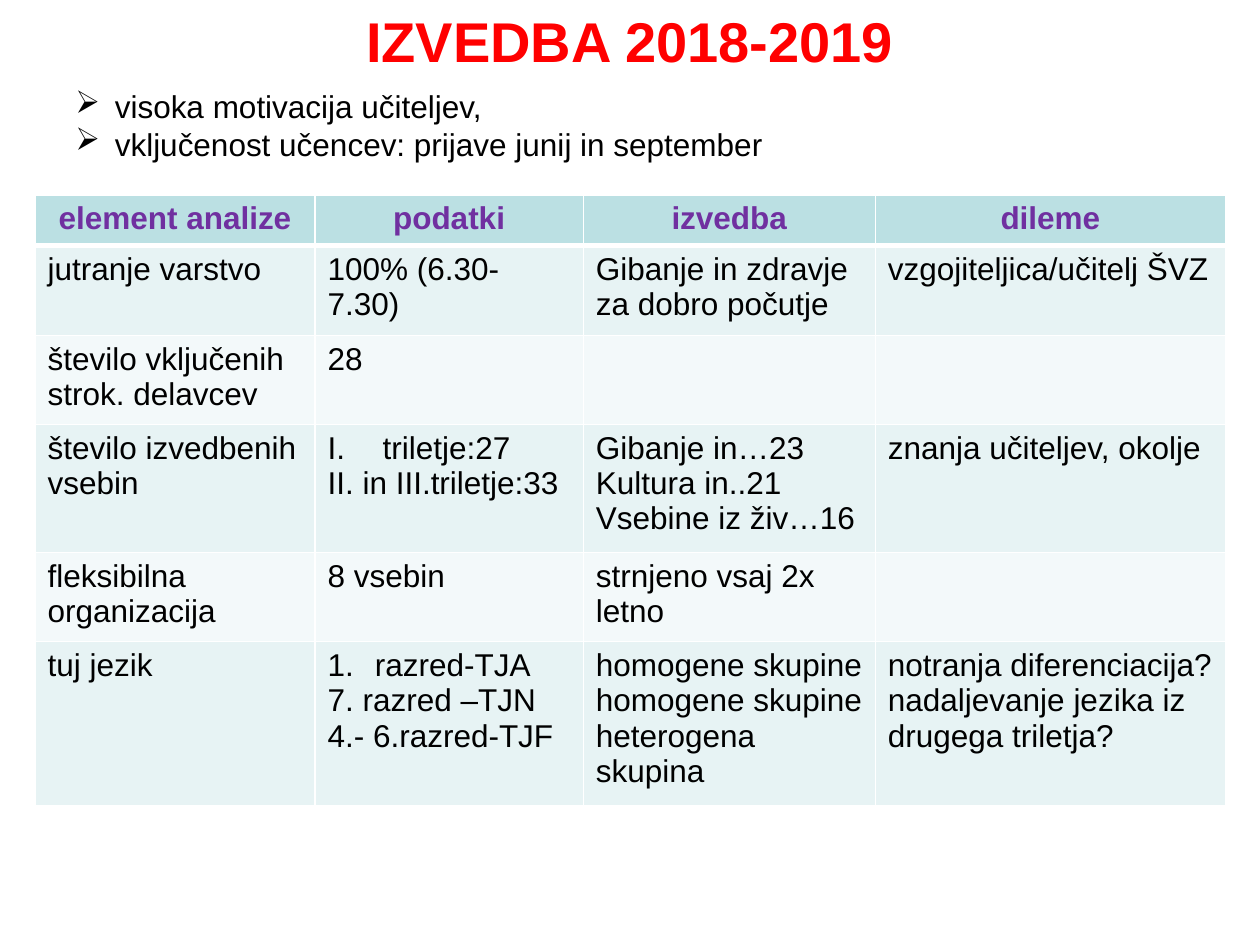
from lxml import etree
from pptx import Presentation
from pptx.dml.color import RGBColor
from pptx.enum.text import MSO_ANCHOR, PP_ALIGN
from pptx.oxml.ns import qn
from pptx.util import Pt

CENTER, LEFT = PP_ALIGN.CENTER, PP_ALIGN.LEFT
MIDDLE = MSO_ANCHOR.MIDDLE
FONT = "Arial"
COLORS = {
    "title": "FF0000", "heading": "7030A0", "body": "000000", "border": "FFFFFF",
    "header": "BBE0E3", "odd": "E7F3F4", "even": "F3F9FA",
}

TITLE = ["IZVEDBA 2018-2019"]
POINTS = ["visoka motivacija učiteljev,", "vključenost učencev: prijave junij in september"]
HEADINGS = ["element analize", "podatki", "izvedba", "dileme"]
ROWS = [
    [["jutranje varstvo"], ["100% (6.30-7.30)"],
     ["Gibanje in zdravje za dobro počutje"], ["vzgojiteljica/učitelj ŠVZ"]],
    [["število vključenih strok. delavcev"], ["28"], [], []],
    [["število izvedbenih vsebin"], ["triletje:27", "II. in III.triletje:33"],
     ["Gibanje in…23", "Kultura in..21", "Vsebine iz živ…16"], ["znanja učiteljev, okolje"]],
    [["fleksibilna organizacija"], ["8 vsebin"], ["strnjeno vsaj 2x letno"], []],
    [["tuj jezik"], ["razred-TJA", "7. razred –TJN", "4.- 6.razred-TJF"],
     ["homogene skupine", "homogene skupine", "heterogena skupina"],
     ["notranja diferenciacija?", "nadaljevanje jezika iz drugega triletja?"]],
]
NUMBERED = {"triletje:27": ("romanUcPeriod", 31.5), "razred-TJA": ("arabicPeriod", 27)}
COLUMN_WIDTHS = [160, 153.3, 166.9, 200.2]
ROW_HEIGHTS = [28.5, 51.4, 50.9, 73.2, 50.9, 93.2]


def add_marker(paragraph, tag, indent, **attributes):
    properties = paragraph._p.get_or_add_pPr()
    properties.set("marL", str(Pt(indent)))
    properties.set("indent", str(-Pt(indent)))
    etree.SubElement(properties, qn(tag), **attributes)


def write_text(frame, lines, size=18, color="body", bold=False, align=LEFT, bullet=None):
    frame.word_wrap = True
    for index, line in enumerate(lines):
        paragraph = frame.paragraphs[0] if index == 0 else frame.add_paragraph()
        if bullet:
            add_marker(paragraph, "a:buChar", 22.5, char=bullet)
        elif line in NUMBERED:
            style, indent = NUMBERED[line]
            add_marker(paragraph, "a:buAutoNum", indent, type=style)
        paragraph.alignment = align
        run = paragraph.add_run()
        run.text = line
        run.font.name = FONT
        run.font.size = Pt(size)
        run.font.bold = bold
        run.font.color.rgb = RGBColor.from_string(COLORS[color])


def style_cell(cell, fill, top, bottom):
    properties = cell._tc.get_or_add_tcPr()
    for side, width in (("L", 1), ("R", 1), ("T", top), ("B", bottom)):
        line = etree.SubElement(properties, qn(f"a:ln{side}"), w=str(Pt(width)))
        solid = etree.SubElement(line, qn("a:solidFill"))
        etree.SubElement(solid, qn("a:srgbClr"), val=COLORS["border"])
    cell.fill.solid()
    cell.fill.fore_color.rgb = RGBColor.from_string(COLORS[fill])


def add_table(slide):
    shape = slide.shapes.add_table(
        len(ROW_HEIGHTS), len(COLUMN_WIDTHS), Pt(20), Pt(111.5),
        Pt(sum(COLUMN_WIDTHS)), Pt(sum(ROW_HEIGHTS)))
    table = shape.table
    for column, width in zip(table.columns, COLUMN_WIDTHS):
        column.width = Pt(width)
    for row, height in zip(table.rows, ROW_HEIGHTS):
        row.height = Pt(height)
    for index, contents in enumerate([[[heading] for heading in HEADINGS]] + ROWS):
        for cell, lines in zip(table.rows[index].cells, contents):
            if index == 0:
                style_cell(cell, "header", 1, 3)
                write_text(cell.text_frame, lines, color="heading", bold=True, align=CENTER)
            else:
                style_cell(cell, "odd" if index % 2 else "even", 3 if index == 1 else 1, 1)
                write_text(cell.text_frame, lines)


def main():
    presentation = Presentation()
    presentation.slide_width, presentation.slide_height = Pt(720), Pt(540)
    slide = presentation.slides.add_slide(presentation.slide_layouts[6])
    title = slide.shapes.add_textbox(Pt(36), Pt(1), Pt(648), Pt(44)).text_frame
    title.vertical_anchor = MIDDLE
    write_text(title, TITLE, size=32, color="title", bold=True, align=CENTER)
    points = slide.shapes.add_textbox(Pt(36), Pt(46), Pt(630), Pt(73)).text_frame
    write_text(points, POINTS, bullet="➢")
    add_table(slide)
    presentation.save("out.pptx")


if __name__ == "__main__":
    main()
